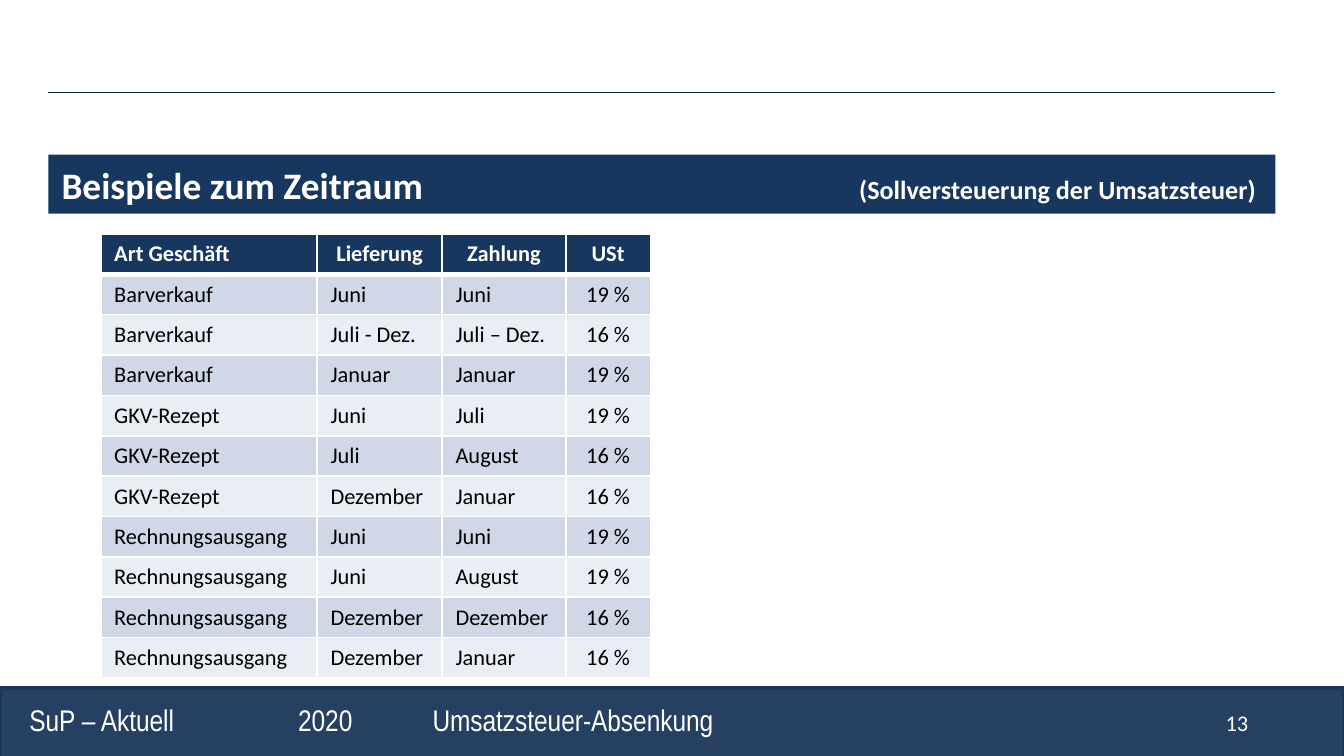
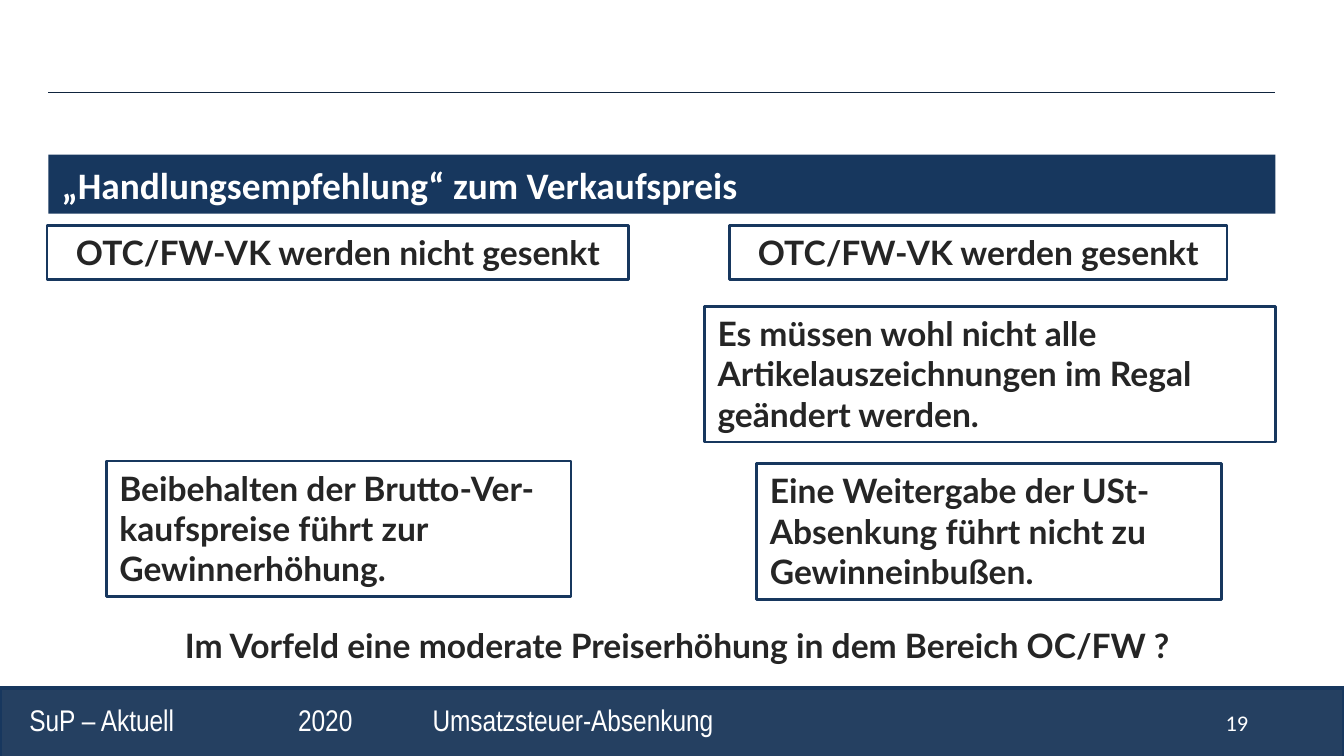
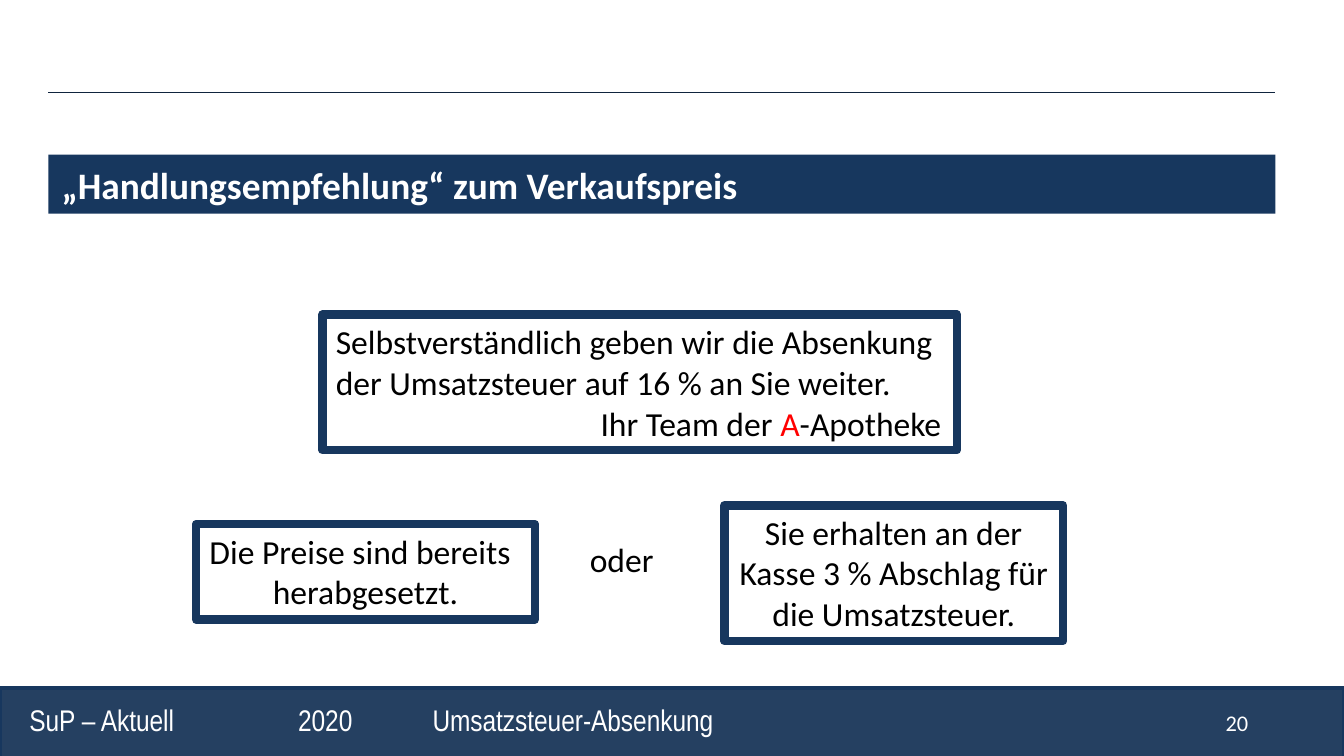
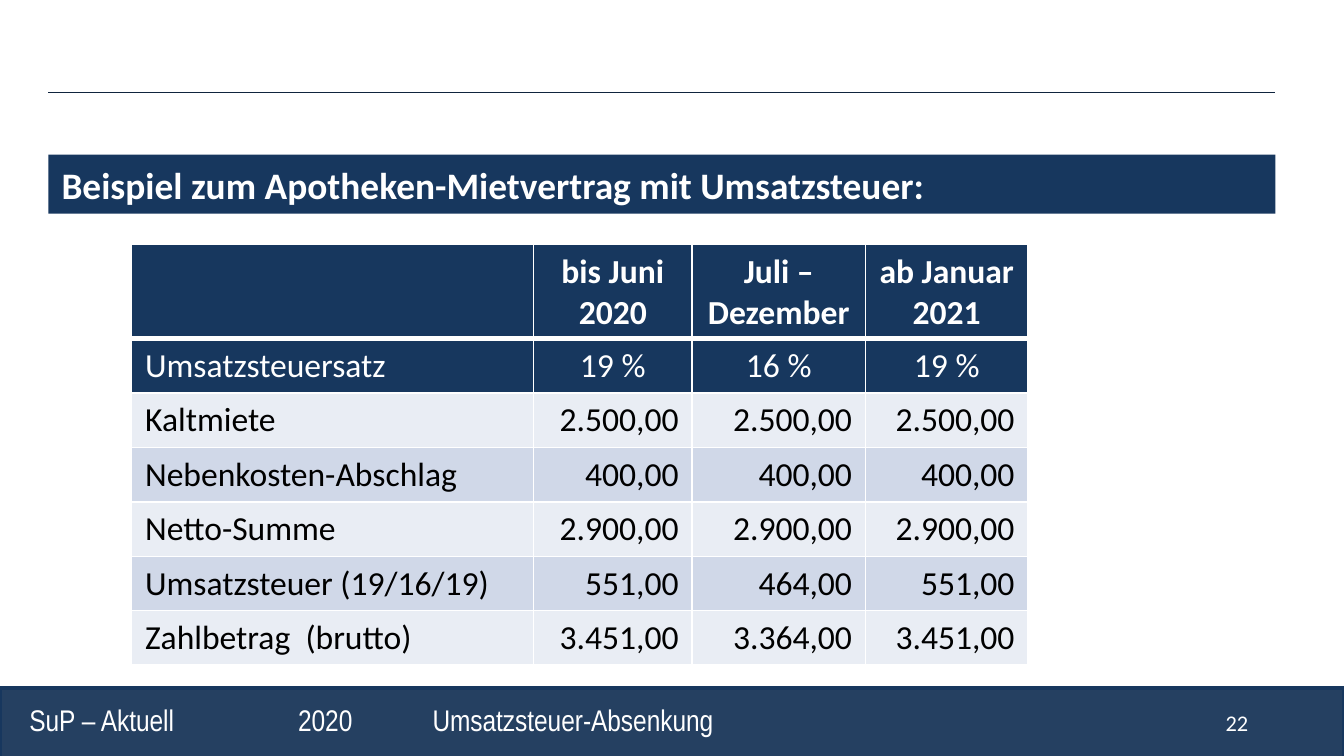
from lxml import etree
from pptx import Presentation
from pptx.dml.color import RGBColor
from pptx.enum.shapes import MSO_CONNECTOR, MSO_SHAPE
from pptx.enum.text import MSO_ANCHOR, PP_ALIGN
from pptx.oxml.ns import qn
from pptx.util import Inches, Pt

NAVY = RGBColor(0x17, 0x37, 0x5E)
FOOTER_BLUE = RGBColor(0x25, 0x40, 0x61)
RULE_BLUE = RGBColor(0x0F, 0x24, 0x3E)
BAND_DARK = RGBColor(0xD0, 0xD8, 0xE8)
BAND_LIGHT = RGBColor(0xE9, 0xED, 0xF4)
CHARCOAL = RGBColor(0x25, 0x25, 0x25)
RED = RGBColor(0xFF, 0, 0)
BLACK = RGBColor(0, 0, 0)
WHITE = RGBColor(0xFF, 0xFF, 0xFF)

BODY_FONT = "Calibri"
LEFT, CENTER, RIGHT = PP_ALIGN.LEFT, PP_ALIGN.CENTER, PP_ALIGN.RIGHT
RECOMMENDATION = "„Handlungsempfehlung“ zum Verkaufspreis"


def style(paragraph, size, color=BLACK, bold=False, font=BODY_FONT, align=LEFT):
    paragraph.alignment = align
    paragraph.font.size = Pt(size)
    paragraph.font.color.rgb = color
    paragraph.font.bold = bold
    paragraph.font.name = font


def add_tabs(paragraph, *stops):
    """Set tab stops given as (inches, alignment code) pairs, before any font."""
    tab_list = etree.SubElement(paragraph._p.get_or_add_pPr(), qn("a:tabLst"))
    for position, code in stops:
        etree.SubElement(tab_list, qn("a:tab"), pos=str(Inches(position)), algn=code)


def add_label(slide, box, text, size=18, tabs=(), **look):
    label = slide.shapes.add_textbox(*map(Inches, box))
    label.text_frame.word_wrap = True
    paragraph = label.text_frame.paragraphs[0]
    paragraph.text = text
    if tabs:
        add_tabs(paragraph, *tabs)
    style(paragraph, size, **look)
    return paragraph


def add_panel(slide, box, fill=None, border=None, width=1.0):
    """Add a rectangle without shadow; its outline has round corners."""
    panel = slide.shapes.add_shape(MSO_SHAPE.RECTANGLE, *map(Inches, box))
    panel.shadow.inherit = False
    if fill is None:
        panel.fill.background()
    else:
        panel.fill.solid()
        panel.fill.fore_color.rgb = fill
    if border is None:
        panel.line.fill.background()
    else:
        panel.line.color.rgb = border
        panel.line.width = Pt(width)
        etree.SubElement(panel.line._get_or_add_ln(), qn("a:round"))
    return panel


def add_note(slide, box, *lines, aligns=(LEFT,), width=4.5, **look):
    """Add a framed statement with one paragraph per line."""
    frame = add_panel(slide, box, border=NAVY, width=width).text_frame
    frame.word_wrap = True
    frame.vertical_anchor = MSO_ANCHOR.TOP
    frame.text = "\n".join(lines)
    for paragraph, align in zip(frame.paragraphs, aligns):
        style(paragraph, 18, align=align, **look)


def add_header(slide, box, title, remark):
    left, top, width, height = box
    rule = slide.shapes.add_connector(
        MSO_CONNECTOR.STRAIGHT, Inches(left), Inches(top),
        Inches(left + width), Inches(top))
    rule.line.color.rgb = RULE_BLUE
    rule.line.width = Pt(0.75)
    etree.SubElement(rule._element.spPr, qn("a:effectLst"))

    band_height = 0.44
    band = add_panel(slide, (left, top + height - band_height, width, band_height), NAVY)
    band.text_frame.word_wrap = True
    paragraph = band.text_frame.paragraphs[0]
    paragraph.add_run().text = title
    if remark:
        add_tabs(paragraph, (width - 0.24, "r"))
        remark_run = paragraph.add_run()
        remark_run.text = "\t" + remark
        remark_run.font.size = Pt(14)
    style(paragraph, 20, WHITE, bold=True)


def add_footer(slide, box, number):
    left, top, width, height = box
    add_panel(slide, box, FOOTER_BLUE, NAVY, 2)
    add_label(slide, (left + 9.02, top + 0.11, 0.71, 0.3), number, 12, color=WHITE)
    add_label(slide, (left + 0.12, top + 0.05, width - 0.63, 0.37),
              "SuP – Aktuell\t2020\tUmsatzsteuer-Absenkung", 16,
              tabs=((2, "l"), (3, "l")), color=WHITE, font="Arial Narrow")


def add_page(deck, title, number, remark=None):
    slide = deck.slides.add_slide(deck.slide_layouts[6])
    add_header(slide, (0.36, 0.69, 9.13, 0.9), title, remark)
    add_footer(slide, (0, 5.12, 10, 0.52), number)
    return slide


def set_borders(cell, bottom):
    properties = cell._tc.get_or_add_tcPr()
    widths = {"lnL": 1, "lnR": 1, "lnT": 1, "lnB": bottom}
    for index, (side, points) in enumerate(widths.items()):
        border = etree.Element(qn("a:" + side), w=str(Pt(points)))
        solid = etree.SubElement(border, qn("a:solidFill"))
        etree.SubElement(solid, qn("a:srgbClr"), val=str(WHITE))
        properties.insert(index, border)


def add_banded_table(slide, origin, columns, heights, rows, size, aligns, dark_rows=1):
    """Fill a table; aligns(row, column) gives the alignment of each cell."""
    left, top = origin
    table = slide.shapes.add_table(
        len(rows), len(columns), Inches(left), Inches(top),
        Inches(sum(columns)), Inches(sum(heights))).table
    for column, width in zip(table.columns, columns):
        column.width = Inches(width)
    for r, (row, height) in enumerate(zip(rows, heights)):
        table.rows[r].height = Inches(height)
        for c, text in enumerate(row):
            cell = table.cell(r, c)
            cell.text = text
            dark = r < dark_rows
            style(cell.text_frame.paragraphs[0], size, WHITE if dark else BLACK,
                  bold=r == 0, align=aligns(r, c))
            cell.fill.solid()
            cell.fill.fore_color.rgb = NAVY if dark else (BAND_LIGHT, BAND_DARK)[r % 2]
            set_borders(cell, bottom=3 if r == 0 else 1)


def build_periods(deck):
    slide = add_page(deck, "Beispiele zum Zeitraum", "13",
                     "(Sollversteuerung der Umsatzsteuer)")
    rows = [
        ("Art Geschäft", "Lieferung", "Zahlung", "USt"),
        ("Barverkauf", "Juni", "Juni", "19 %"),
        ("Barverkauf", "Juli - Dez.", "Juli – Dez.", "16 %"),
        ("Barverkauf", "Januar", "Januar", "19 %"),
        ("GKV-Rezept", "Juni", "Juli", "19 %"),
        ("GKV-Rezept", "Juli", "August", "16 %"),
        ("GKV-Rezept", "Dezember", "Januar", "16 %"),
        ("Rechnungsausgang", "Juni", "Juni", "19 %"),
        ("Rechnungsausgang", "Juni", "August", "19 %"),
        ("Rechnungsausgang", "Dezember", "Dezember", "16 %"),
        ("Rechnungsausgang", "Dezember", "Januar", "16 %"),
    ]
    add_banded_table(
        slide, (0.75, 1.74), (1.61, 0.93, 0.92, 0.63), [0.3] * len(rows), rows, 12,
        lambda r, c: CENTER if c == 3 or (r == 0 and c) else LEFT)


def build_price_options(deck):
    slide = add_page(deck, RECOMMENDATION, "19")
    look = {"color": CHARCOAL, "bold": True, "font": "Lato"}
    notes = [
        ((0.35, 1.68, 4.33, 0.4), "OTC/FW-VK werden nicht gesenkt", CENTER),
        ((5.43, 1.68, 3.7, 0.4), "OTC/FW-VK werden gesenkt", CENTER),
        ((5.24, 2.28, 4.25, 1.01), "Es müssen wohl nicht alle Artikelauszeichnungen "
                                   "im Regal geändert werden.", LEFT),
        ((5.63, 3.45, 3.46, 1.01), "Eine Weitergabe der USt-Absenkung führt nicht zu "
                                   "Gewinneinbußen.", LEFT),
        ((0.79, 3.43, 3.46, 1.01), "Beibehalten der Brutto-Ver-kaufspreise führt zur "
                                   "Gewinnerhöhung.", LEFT),
    ]
    for box, text, align in notes:
        add_note(slide, box, text, aligns=(align,), width=1.5, **look)
    add_label(slide, (0.51, 4.6, 9.06, 0.4),
              "Im Vorfeld eine moderate Preiserhöhung in dem Bereich OC/FW ?",
              align=CENTER, **look)


def build_customer_signs(deck):
    slide = add_page(deck, RECOMMENDATION, "20")
    add_note(slide, (2.4, 2.34, 4.72, 1.01),
             "Selbstverständlich geben wir die Absenkung der Umsatzsteuer auf 16 % "
             "an Sie weiter.")
    signature = add_label(slide, (4.37, 2.95, 2.91, 0.4), "Ihr Team der ")
    initial = signature.add_run()
    initial.text = "A"
    initial.font.color.rgb = RED
    signature.add_run().text = "-Apotheke"
    add_note(slide, (1.46, 3.9, 2.52, 0.71), "Die Preise sind bereits", "herabgesetzt.",
             aligns=(LEFT, CENTER))
    add_label(slide, (4.29, 3.96, 0.79, 0.4), "oder")
    add_note(slide, (5.39, 3.76, 2.52, 1.01),
             "Sie erhalten an der Kasse 3 % Abschlag für die Umsatzsteuer.",
             aligns=(CENTER,))


def build_rent_example(deck):
    slide = add_page(deck, "Beispiel zum Apotheken-Mietvertrag mit Umsatzsteuer:", "22")
    rows = [
        ("", "bis Juni 2020", "Juli – Dezember", "ab Januar 2021"),
        ("Umsatzsteuersatz", "19 %", "16 %", "19 %"),
        ("Kaltmiete", "2.500,00", "2.500,00", "2.500,00"),
        ("Nebenkosten-Abschlag", "400,00", "400,00", "400,00"),
        ("Netto-Summe", "2.900,00", "2.900,00", "2.900,00"),
        ("Umsatzsteuer (19/16/19)", "551,00", "464,00", "551,00"),
        ("Zahlbetrag  (brutto)", "3.451,00", "3.364,00", "3.451,00"),
    ]
    table_height, head_height = 3.13, 0.7
    body_rows = len(rows) - 1
    heights = [head_height] + [(table_height - head_height) / body_rows] * body_rows
    add_banded_table(
        slide, (0.98, 1.82), (2.99, 1.18, 1.29, 1.21), heights, rows, 18,
        lambda r, c: LEFT if c == 0 else CENTER if r < 2 else RIGHT, dark_rows=2)


def main():
    deck = Presentation()
    deck.slide_width, deck.slide_height = Inches(10), Inches(10 * 9 / 16)
    build_periods(deck)
    build_price_options(deck)
    build_customer_signs(deck)
    build_rent_example(deck)
    deck.save("out.pptx")


if __name__ == "__main__":
    main()
